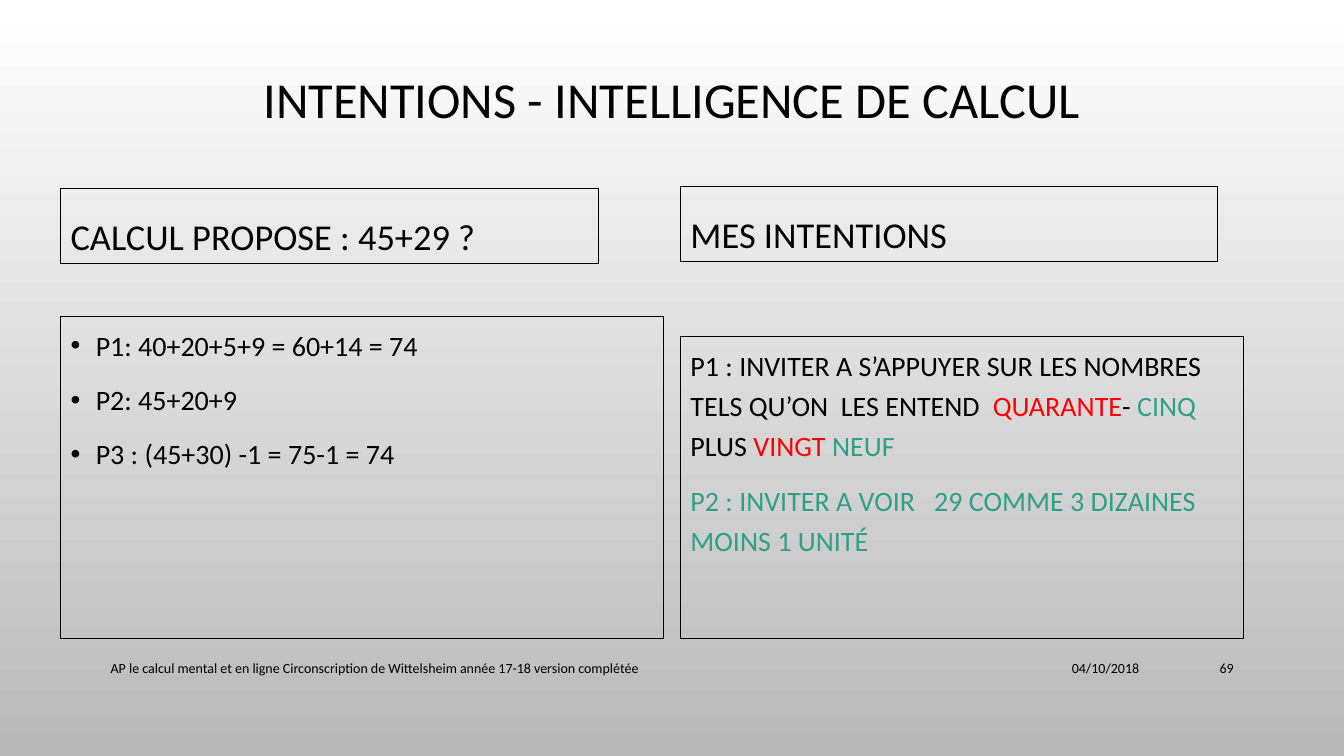
from lxml.etree import SubElement
from pptx import Presentation
from pptx.dml.color import RGBColor
from pptx.enum.text import MSO_ANCHOR as Anchor, MSO_AUTO_SIZE as AutoSize, PP_ALIGN as Align
from pptx.oxml.ns import qn
from pptx.util import Pt

BLACK = RGBColor(0x00, 0x00, 0x00)
RED = RGBColor(0xFF, 0x00, 0x00)
GREEN = RGBColor(0x2F, 0xA0, 0x87)
WHITE = RGBColor(0xFF, 0xFF, 0xFF)
GREY = RGBColor(0xB9, 0xB9, 0xB9)

LEFT, RIGHT = 43.2, 486
COMPARISON_LAYOUT = 4

STRATEGIES = [
    [("P1: 40+20+5+9 = 60+14 = 74", BLACK)],
    [("P2: 45+20+9", BLACK)],
    [("P3 : (45+30) -1 = 75-1 = 74", BLACK)],
]
INTENTIONS = [
    [
        ("P1 : INVITER A S’APPUYER SUR LES NOMBRES TELS QU’ON  LES ENTEND  ", BLACK),
        ("QUARANTE", RED),
        ("- ", BLACK),
        ("CINQ ", GREEN),
        ("PLUS ", BLACK),
        ("VINGT ", RED),
        ("NEUF", GREEN),
    ],
    [("P2 : INVITER A VOIR   29 COMME 3 DIZAINES MOINS 1 UNITÉ", GREEN)],
]


class SlideBuilder:
    font_name = "Calibri"

    def __init__(self, slide):
        self.slide = slide

    def background(self, top_color, bottom_color):
        fill = self.slide.background.fill
        fill.gradient()
        fill.gradient_angle = 270
        for stop, color, position in zip(fill.gradient_stops, (top_color, bottom_color), (0, 1)):
            stop.color.rgb = color
            stop.position = position

    def place(self, shape, box):
        for name, length in zip(("left", "top", "width", "height"), box):
            setattr(shape, name, Pt(length))

    def fill_text(self, shape, paragraphs, size, anchor, bullet=None, **paragraph_format):
        """Fill a shape with paragraphs, each a list of (text, color) runs."""
        frame = shape.text_frame
        for name, value in {"word_wrap": True, "auto_size": AutoSize.NONE,
                            "vertical_anchor": anchor}.items():
            setattr(frame, name, value)
        for index, runs in enumerate(paragraphs):
            paragraph = frame.add_paragraph() if index else frame.paragraphs[0]
            self.set_bullet(paragraph, bullet)
            spacing = {"space_before": Pt(10 if index else 0), "space_after": Pt(0)}
            for name, value in {**spacing, **paragraph_format}.items():
                setattr(paragraph, name, value)
            for text, color in runs:
                run = paragraph.add_run()
                run.text = text
                for name, value in {"name": self.font_name, "size": Pt(size),
                                    "bold": False}.items():
                    setattr(run.font, name, value)
                run.font.color.rgb = color

    def set_bullet(self, paragraph, bullet):
        properties = paragraph._p.get_or_add_pPr()
        indent = Pt(18) if bullet else 0
        properties.set("marL", str(indent))
        properties.set("indent", str(-indent))
        if bullet:
            color = SubElement(properties, qn("a:buClr"))
            SubElement(color, qn("a:srgbClr"), val=str(BLACK))
            SubElement(properties, qn("a:buFont"), typeface="Arial")
            SubElement(properties, qn("a:buChar"), char=bullet)
        else:
            SubElement(properties, qn("a:buNone"))

    def title(self, text, box):
        shape = self.slide.shapes.title
        self.place(shape, box)
        self.fill_text(shape, [[(text, BLACK)]], 36, Anchor.MIDDLE,
                       alignment=Align.CENTER, line_spacing=0.9)

    def framed_body(self, index, box):
        shape = self.slide.placeholders[index]
        self.place(shape, box)
        shape.line.color.rgb = BLACK
        shape.line.width = Pt(0.75)
        return shape

    def heading(self, index, text, box):
        self.fill_text(self.framed_body(index, box), [[(text, BLACK)]], 26, Anchor.BOTTOM,
                       alignment=Align.LEFT, line_spacing=0.85)

    def content(self, index, paragraphs, box, bullet=None):
        self.fill_text(self.framed_body(index, box), paragraphs, 20, Anchor.TOP, bullet,
                       alignment=Align.LEFT, line_spacing=1.2)

    def footer(self, text, left, width, alignment):
        shape = self.slide.shapes.add_textbox(Pt(left), Pt(463), Pt(width), Pt(28.8))
        self.fill_text(shape, [[(text, BLACK)]], 10, Anchor.MIDDLE, alignment=alignment)


def main():
    presentation = Presentation()
    presentation.slide_width, presentation.slide_height = Pt(960), Pt(540)
    layout = presentation.slide_layouts[COMPARISON_LAYOUT]
    builder = SlideBuilder(presentation.slides.add_slide(layout))

    builder.background(WHITE, GREY)
    builder.title("INTENTIONS - INTELLIGENCE DE CALCUL", (72, 49, 816, 48))
    builder.heading(1, "CALCUL PROPOSE : 45+29 ?", (LEFT, 134.6, 384, 53.5))
    builder.content(2, STRATEGIES, (LEFT, 226.1, 430.6, 229.7), bullet="•")
    builder.heading(3, "MES INTENTIONS", (RIGHT, 133.2, 384, 53.5))
    builder.content(4, INTENTIONS, (RIGHT, 240.3, 402, 215.7))

    builder.footer("04/10/2018", 604.8, 216, Align.RIGHT)
    builder.footer("AP le calcul mental et en ligne Circonscription de Wittelsheim "
                   "année 17-18 version complétée", 72, 525.6, Align.LEFT)
    builder.footer("69", 828, 60.3, Align.RIGHT)
    presentation.save("out.pptx")


if __name__ == "__main__":
    main()
